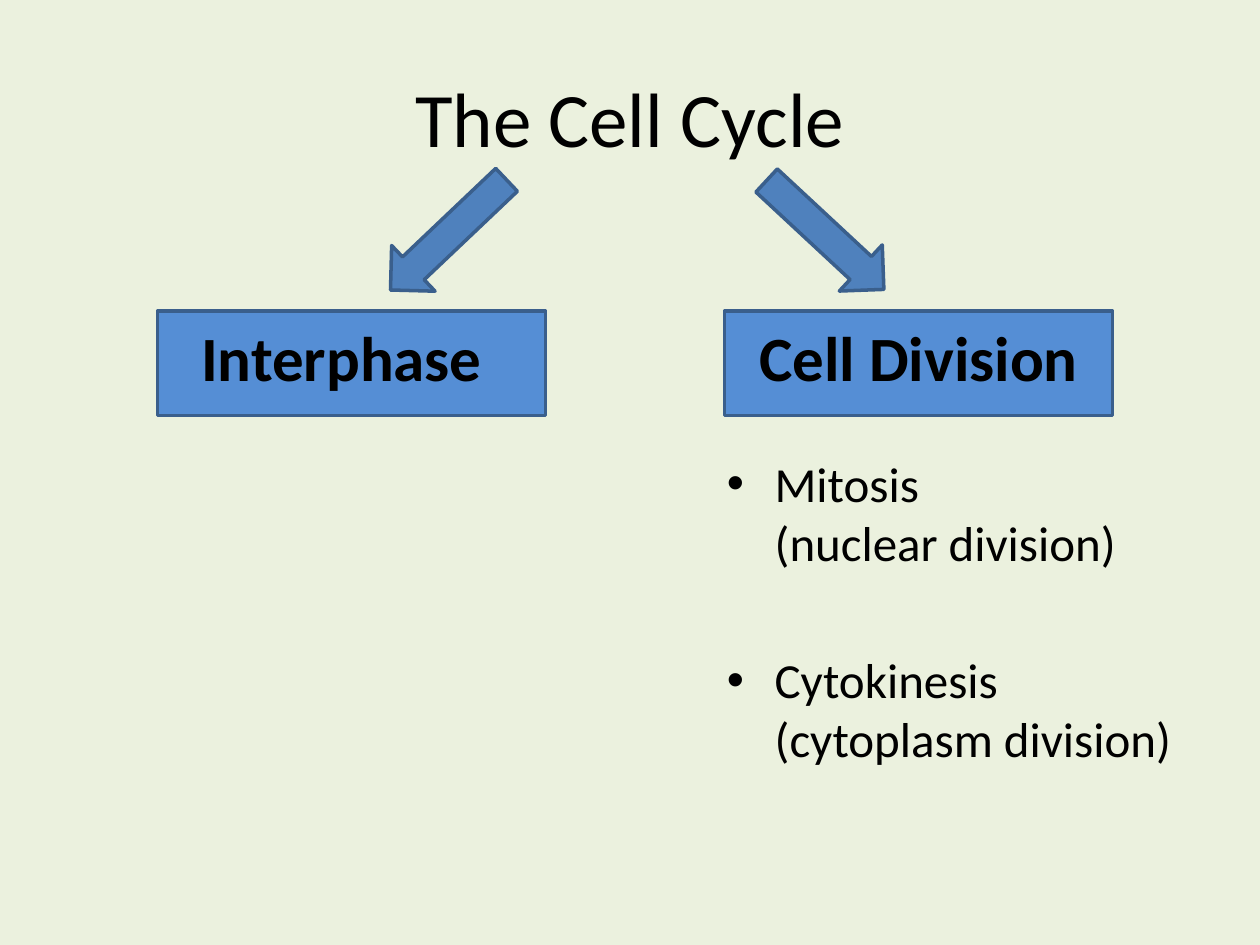
from lxml.etree import SubElement
from pptx import Presentation
from pptx.dml.color import RGBColor
from pptx.enum.shapes import MSO_SHAPE
from pptx.enum.text import MSO_ANCHOR, PP_ALIGN
from pptx.oxml.ns import qn
from pptx.util import Inches, Pt

COLOURS = {
    "background": "EBF1DE",
    "panel": "558ED5",
    "arrow": "4F81BD",
    "outline": "3A5F8C",
    "text": "000000",
}

deck = Presentation()
deck.slide_width, deck.slide_height = Inches(10), Inches(7.5)
page = deck.slides.add_slide(deck.slide_layouts[6])
page.background.fill.solid()
page.background.fill.fore_color.rgb = RGBColor.from_string(COLOURS["background"])


def add_text(lines, left, top, width, height, size, bold=False,
             align=PP_ALIGN.CENTER, anchor=MSO_ANCHOR.MIDDLE, bullet=False, gap=0):
    box = page.shapes.add_textbox(Inches(left), Inches(top), Inches(width), Inches(height))
    frame = box.text_frame
    frame.word_wrap = True
    frame.vertical_anchor = anchor
    for index, line in enumerate(lines):
        para = frame.paragraphs[0] if index == 0 else frame.add_paragraph()
        para.text = line
        para.alignment = align
        para.space_before = Pt(gap if index else 0)
        para.font.size = Pt(size)
        for span in para.runs:
            span.font.name = "Calibri"
            span.font.size = Pt(size)
            span.font.bold = bold
            span.font.color.rgb = RGBColor.from_string(COLOURS["text"])
        if bullet:
            properties = para._p.get_or_add_pPr()
            properties.set("marL", str(Inches(0.38)))
            properties.set("indent", str(Inches(-0.38)))
            SubElement(properties, qn("a:buFont"), typeface="Arial")
            SubElement(properties, qn("a:buChar"), char="•")


def add_block(kind, left, top, width, height, fill, rotation=0):
    block = page.shapes.add_shape(kind, Inches(left), Inches(top), Inches(width), Inches(height))
    block.shadow.inherit = False
    block.rotation = rotation
    block.fill.solid()
    block.fill.fore_color.rgb = RGBColor.from_string(COLOURS[fill])
    block.line.color.rgb = RGBColor.from_string(COLOURS["outline"])
    block.line.width = Pt(2)


# Title
add_text(["The Cell Cycle"], 0.5, 0.3, 9, 1.25, size=44)

# The two phases: panel, heading and the arrow that leads to it
phases = [
    ("Interphase", 1.25, 0.5, 3.31, 46.5),
    ("Cell Division", 5.75, 5.08, 6.3, 312.9),
]
for heading, panel_left, heading_left, arrow_left, rotation in phases:
    add_block(MSO_SHAPE.RECTANGLE, panel_left, 2.47, 3.08, 0.83, "panel")
    add_text([heading], heading_left, 2.48, 4.42, 0.7, size=36, bold=True,
             anchor=MSO_ANCHOR.BOTTOM)
    add_block(MSO_SHAPE.DOWN_ARROW, arrow_left, 1.23, 0.5, 1.27, "arrow", rotation)

# Parts of cell division
add_text(["Mitosis\v(nuclear division)", "Cytokinesis\v(cytoplasm division)"],
         5.67, 3.55, 3.84, 3.95, size=28, align=PP_ALIGN.LEFT,
         anchor=MSO_ANCHOR.TOP, bullet=True, gap=45)

deck.save("out.pptx")
